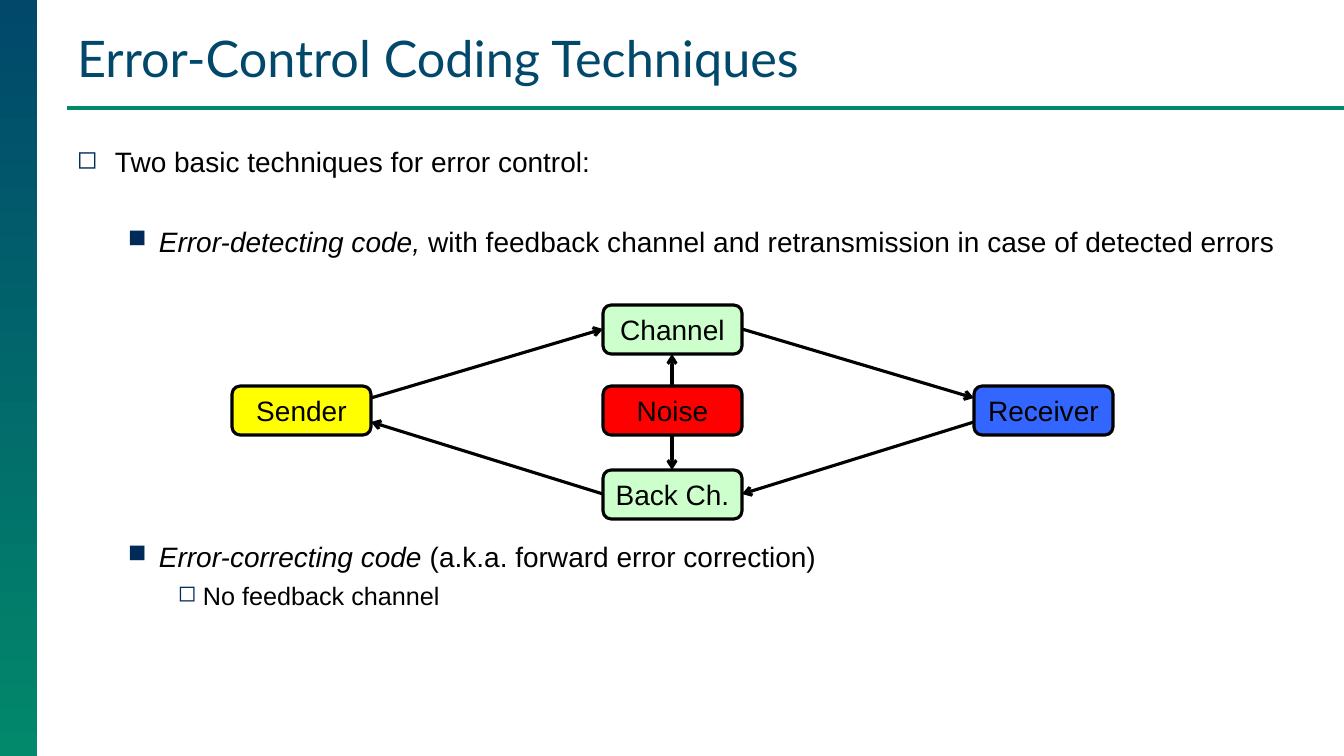
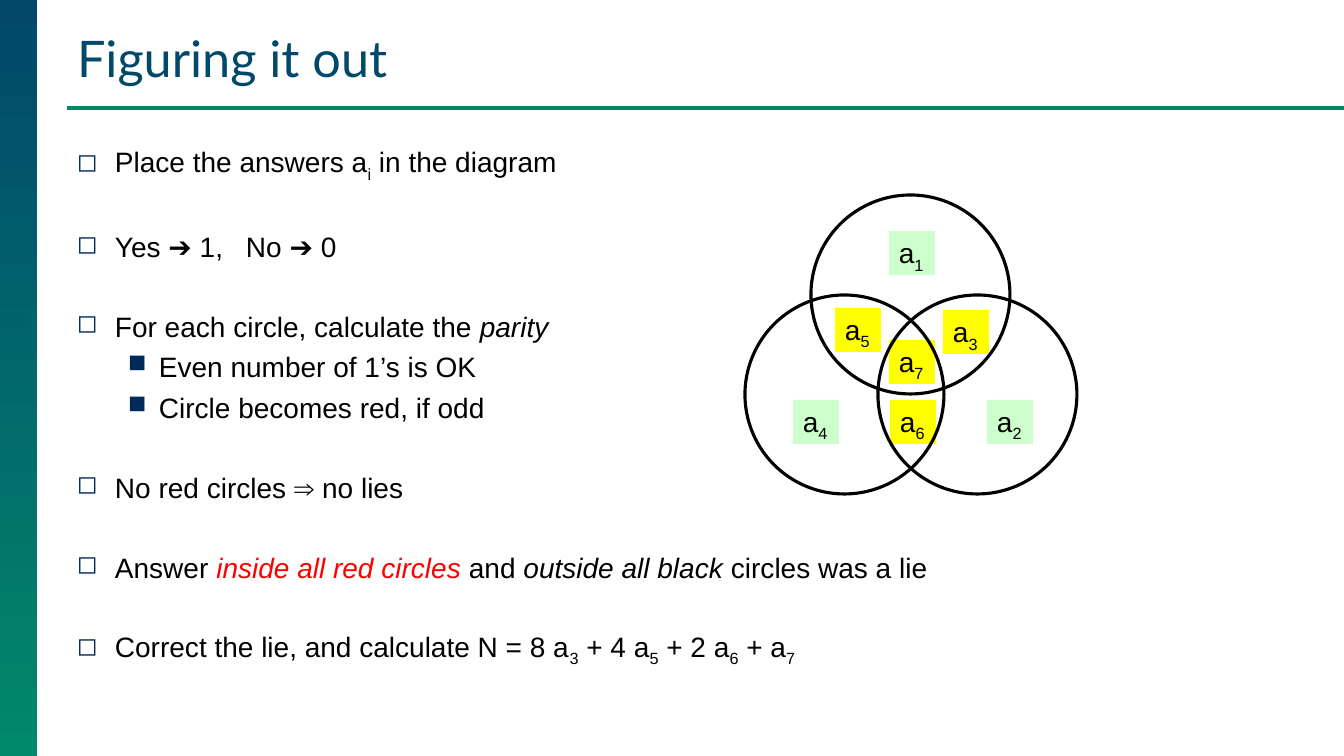
from dataclasses import dataclass
from lxml.etree import SubElement
from pptx import Presentation
from pptx.dml.color import RGBColor
from pptx.enum.shapes import MSO_CONNECTOR as Connector, MSO_SHAPE as Shape
from pptx.enum.text import MSO_ANCHOR as Anchor, MSO_AUTO_SIZE as AutoSize, PP_ALIGN as Align
from pptx.oxml.ns import qn
from pptx.util import Pt

SLIDE_WIDTH, SLIDE_HEIGHT = 1344, 756
EMU_PER_PX = 12192000 / SLIDE_WIDTH


@dataclass(frozen=True)
class Theme:
    navy: str = "01486B"
    green: str = "02886B"
    bullet: str = "002A58"
    black: str = "000000"
    red: str = "FF0000"
    yellow: str = "FFFF00"
    blue: str = "3366FF"
    mint: str = "CCFFCC"
    title_font: str = "Lato"
    body_font: str = "Arial"
    title_size: int = 36
    body_size: int = 20
    small_size: int = 18
    line_width: float = 2.25
    row_gap: int = 5      # points before a paragraph
    skipped_row: int = 28  # points for each row left free


THEME = Theme()
ITALIC = {"italic": True}
SUB = {"baseline": -25}

# Level: (bullet, text indent px, hanging px, type size)
LEVELS = [
    ("◻", 38, 38, THEME.body_size),
    ("■", 82, 31, THEME.body_size),
    ("◻", 126, 25, THEME.small_size),
]


def px(*lengths):
    return [round(length * EMU_PER_PX) for length in lengths]


def color(code):
    return RGBColor.from_string(code)


# Text
def add_span(para, text, font=THEME.body_font, size=THEME.body_size,
             ink=THEME.black, italic=False, baseline=0):
    span = para.add_run()
    span.text = text
    span.font.name = font
    span.font.size = Pt(size)
    span.font.color.rgb = color(ink)
    span.font.italic = italic
    if baseline:
        span.font._element.set("baseline", str(baseline * 1000))


def add_spans(para, spans, **style):
    for text, extra in spans:
        add_span(para, text, **{**style, **extra})


def set_bullet(para, level, tab=None):
    char, indent, hanging, _ = LEVELS[level]
    props = para._p.get_or_add_pPr()
    margin, first = px(indent, -hanging)
    props.set("marL", str(margin))
    props.set("indent", str(first))
    SubElement(SubElement(props, qn("a:buClr")), qn("a:srgbClr"), val=THEME.bullet)
    SubElement(props, qn("a:buSzPct"), val="90000")
    SubElement(props, qn("a:buChar"), char=char)
    if tab:
        tabs = SubElement(props, qn("a:tabLst"))
        SubElement(tabs, qn("a:tab"), pos=str(px(tab)[0]), algn="l")


def add_bullets(page, box, items):
    """Each item is (level, rows left free above, spans, optional tab stop)."""
    frame = page.shapes.add_textbox(*px(*box)).text_frame
    frame.word_wrap = True
    for number, (level, skipped, spans, *tab) in enumerate(items):
        para = frame.add_paragraph() if number else frame.paragraphs[0]
        set_bullet(para, level, *tab)
        if number:
            para.space_before = Pt(THEME.row_gap + skipped * THEME.skipped_row)
        add_spans(para, spans, size=LEVELS[level][3])


# Shapes and lines
def add_block(page, kind, box, fill=None, outline=True):
    block = page.shapes.add_shape(kind, *px(*box))
    block.shadow.inherit = False
    if fill:
        block.fill.solid()
        block.fill.fore_color.rgb = color(fill)
    else:
        block.fill.background()
    if outline:
        block.line.color.rgb = color(THEME.black)
        block.line.width = Pt(THEME.line_width)
    else:
        block.line.fill.background()
    return block


def add_line(page, start, end, ink=THEME.black, arrow=False):
    line = page.shapes.add_connector(Connector.STRAIGHT, *px(*start, *end))
    line.line.color.rgb = color(ink)
    line.line.width = Pt(THEME.line_width)
    if arrow:
        SubElement(line.line._get_or_add_ln(), qn("a:tailEnd"), type="arrow")
    SubElement(line._element.spPr, qn("a:effectLst"))


# Frame shared by all slides
def add_page(deck, title):
    page = deck.slides.add_slide(deck.slide_layouts[5])
    band = add_block(page, Shape.RECTANGLE, (0, 0, 37, SLIDE_HEIGHT), outline=False)
    band.fill.gradient()
    band.fill.gradient_angle = 270
    for stop, code in zip(band.fill.gradient_stops, (THEME.navy, THEME.green)):
        stop.color.rgb = color(code)
    band.fill.gradient_stops[0].position = 0
    band.fill.gradient_stops[1].position = 1
    add_line(page, (67, 108), (SLIDE_WIDTH, 108), THEME.green)

    heading = page.shapes.title
    heading.left, heading.top, heading.width, heading.height = px(67, 21, 1248, 72)
    frame = heading.text_frame
    frame.word_wrap = True
    frame.auto_size = AutoSize.NONE
    frame.vertical_anchor = Anchor.BOTTOM
    para = frame.paragraphs[0]
    para.alignment = Align.LEFT
    add_span(para, title, font=THEME.title_font, size=THEME.title_size, ink=THEME.navy)
    return page


# Feedback channel diagram
def add_channel_diagram(page, box):
    left, top, width, height = box
    node_width, node_height = 139, 49
    middle = left + (width - node_width) // 2
    right = left + width - node_width
    center_row, bottom_row = top + 81, top + height - node_height
    nodes = [
        ("Sender", left, center_row, THEME.yellow),
        ("Receiver", right, center_row, THEME.blue),
        ("Channel", middle, top, THEME.mint),
        ("Noise", middle, center_row, THEME.red),
        ("Back Ch.", middle, bottom_row, THEME.mint),
    ]
    for text, x, y, fill in nodes:
        node = add_block(page, Shape.ROUNDED_RECTANGLE, (x, y, node_width, node_height), fill)
        frame = node.text_frame
        frame.word_wrap = True
        frame.vertical_anchor = Anchor.MIDDLE
        frame.paragraphs[0].alignment = Align.CENTER
        add_span(frame.paragraphs[0], text)

    half = node_height // 2
    upper, lower = center_row + half - 12, center_row + half + 12
    axis = middle + node_width // 2
    sender_edge, middle_edge = left + node_width, middle + node_width
    arrows = [
        ((sender_edge, upper), (middle, top + half)),
        ((middle_edge, top + half), (right, upper)),
        ((right, lower), (middle_edge, bottom_row + half)),
        ((middle, bottom_row + half), (sender_edge, lower)),
        ((axis, center_row), (axis, top + node_height)),
        ((axis, center_row + node_height), (axis, bottom_row)),
    ]
    for start, end in arrows:
        add_line(page, start, end, arrow=True)


# Three overlapping circles with answer labels
def add_circle_diagram(page, box):
    left, top, width, height = box
    diameter = 199
    labels = [
        ("2", 242, 205, THEME.mint), ("1", 144, 36, THEME.mint),
        ("4", 48, 205, THEME.mint), ("7", 144, 145, THEME.yellow),
        ("5", 90, 113, THEME.yellow), ("6", 145, 205, THEME.yellow),
        ("3", 198, 115, THEME.yellow),
    ]
    for index, x, y, fill in labels:
        label = add_block(page, Shape.RECTANGLE, (left + x, top + y, 46, 44), fill, outline=False)
        frame = label.text_frame
        frame.word_wrap = False
        frame.vertical_anchor = Anchor.TOP
        frame.paragraphs[0].alignment = Align.LEFT
        add_spans(frame.paragraphs[0], [("a", {}), (index, SUB)])

    across, down = width - diameter, height - diameter
    for x, y in ((across // 2, 0), (0, down), (across, down)):
        add_block(page, Shape.OVAL, (left + x, top + y, diameter, diameter))


# Slides
def add_techniques_slide(deck):
    page = add_page(deck, "Error-Control Coding Techniques")
    add_bullets(page, (67, 140, 1231, 555), [
        (0, 0, [("Two basic techniques for error control:", {})]),
        (1, 1, [("Error-detecting code, ", ITALIC),
                ("with feedback channel and retransmission in case of detected errors", {})]),
        (1, 7, [("Error-correcting code ", ITALIC),
                ("(a.k.a. forward error correction)", {})]),
        (2, 0, [("No feedback channel", {})]),
    ])
    add_channel_diagram(page, (232, 305, 881, 214))


def add_figuring_slide(deck):
    page = add_page(deck, "Figuring it out")
    add_bullets(page, (67, 140, 1199, 555), [
        (0, 0, [("Place the answers a", {}), ("i", SUB), (" in the diagram", {})]),
        (0, 1, [("Yes ➔ 1,\tNo ➔ 0", {})], 169),
        (0, 1, [("For each circle, calculate the ", {}), ("parity", ITALIC)]),
        (1, 0, [("Even number of 1’s is OK", {})]),
        (1, 0, [("Circle becomes red, if odd", {})]),
        (0, 1, [("No red circles ⇒ no lies", {})]),
        (0, 1, [("Answer ", {}),
                ("inside all red circles ", {"ink": THEME.red, **ITALIC}),
                ("and ", {}), ("outside all black ", ITALIC),
                ("circles was a lie", {})]),
        (0, 1, [("Correct the lie, and calculate N = 8 a", {}), ("3", SUB),
                (" + 4 a", {}), ("5", SUB), (" + 2 a", {}), ("6", SUB),
                (" + a", {}), ("7", SUB)]),
    ])
    add_circle_diagram(page, (745, 195, 332, 299))


def main():
    deck = Presentation()
    deck.slide_width, deck.slide_height = px(SLIDE_WIDTH, SLIDE_HEIGHT)
    add_techniques_slide(deck)
    add_figuring_slide(deck)
    deck.save("out.pptx")


if __name__ == "__main__":
    main()
